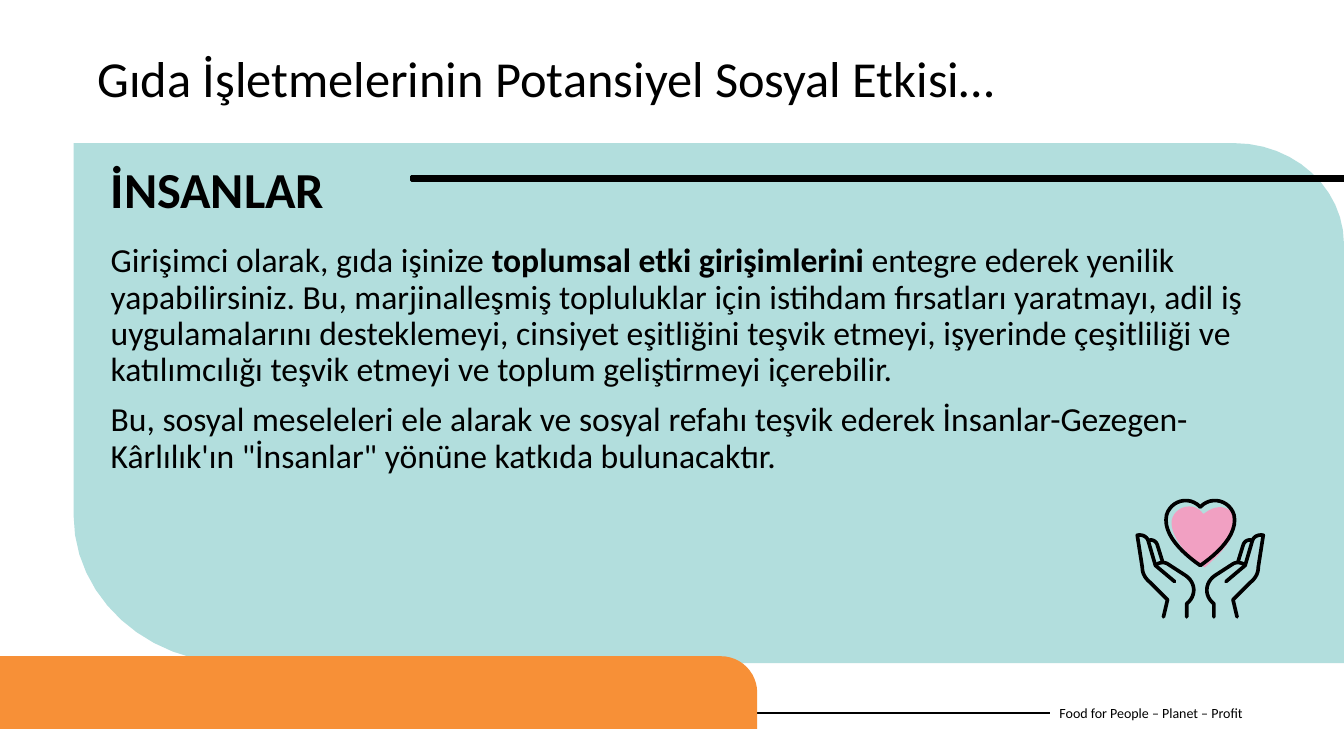
from lxml.etree import SubElement
from pptx import Presentation
from pptx.dml.color import RGBColor
from pptx.enum.shapes import MSO_CONNECTOR, MSO_SHAPE
from pptx.enum.text import MSO_ANCHOR
from pptx.oxml.ns import qn
from pptx.util import Inches, Pt

BLACK, MINT, ORANGE, PINK = "000000", "B2DEDD", "F79037", "F1A0C2"
FONT = "Calibri"
ICON_AXIS = 11.905
ICON_LINE = 2.6

# An outline is a list of (x, y) corners and (x1, y1, x2, y2, x, y) curves.
PANEL = [(0.73, 1.42), (12.24, 1.42), (12.84, 1.42, 13.33, 1.87, 13.33, 2.42),
         (13.33, 6.58), (2.34, 6.58), (1.45, 6.58, 0.73, 5.92, 0.73, 5.11)]
HEART_FILL = [(11.62, 5.2), (11.61, 5.05, 11.81, 4.96, 11.92, 5.08),
              (11.93, 5.1, 11.94, 5.1, 11.95, 5.09),
              (12.09, 4.98, 12.23, 5.04, 12.25, 5.15),
              (12.27, 5.33, 12.11, 5.49, 11.95, 5.63),
              (11.8, 5.55, 11.63, 5.35, 11.62, 5.2)]
HEART_HALF = [(11.905, 5.03), (12.02, 4.91, 12.2, 4.97, 12.24, 5.11),
              (12.28, 5.3, 12.08, 5.49, 11.905, 5.61)]
PALM = [(12.27, 6.12), (12.23, 5.95), (12.4, 5.78),
        (12.45, 5.74, 12.48, 5.69, 12.48, 5.63), (12.53, 5.31),
        (12.47, 5.3, 12.43, 5.33, 12.42, 5.37), (12.35, 5.61), (12.16, 5.77)]
THUMB = [(12.04, 6.12), (12.04, 5.99), (11.94, 5.91, 11.95, 5.78, 12.05, 5.71),
         (12.22, 5.6), (12.26, 5.57, 12.31, 5.58, 12.34, 5.6)]
FINGER = [(12.28, 5.57), (12.33, 5.41), (12.34, 5.37, 12.38, 5.35, 12.41, 5.36)]


def rgb(value):
    return RGBColor.from_string(value)


def paint(sp, fill=None, line=None, width=1):
    sp.shadow.inherit = False
    if fill:
        sp.fill.solid()
        sp.fill.fore_color.rgb = rgb(fill)
    else:
        sp.fill.background()
    if line:
        sp.line.color.rgb = rgb(line)
        sp.line.width = Pt(width)
    else:
        sp.line.fill.background()
    return sp


def flatten(outline, steps=12):
    """Turn corners and cubic curves into plain points."""
    points = []
    for node in outline:
        if len(node) == 2:
            points.append(node)
            continue
        start = points[-1]
        c1, c2, end = node[:2], node[2:4], node[4:]
        for i in range(1, steps + 1):
            t = i / steps
            u = 1 - t
            points.append(tuple(
                u**3 * a + 3 * u * u * t * b + 3 * u * t * t * c + t**3 * d
                for a, b, c, d in zip(start, c1, c2, end)))
    return points


def add_outline(s, points, close=True, **style):
    points = [(Inches(x), Inches(y)) for x, y in points]
    builder = s.shapes.build_freeform(*points[0])
    builder.add_line_segments(points[1:], close=close)
    return paint(builder.convert_to_shape(), **style)


def add_stroke(s, points):
    sp = add_outline(s, points, close=False, line=BLACK, width=ICON_LINE)
    ln = sp.line._get_or_add_ln()
    ln.set("cap", "rnd")
    SubElement(ln, qn("a:round"))


def add_box(s, kind, box, **style):
    return paint(s.shapes.add_shape(kind, *map(Inches, box)), **style)


def add_line(s, start, end, width):
    sp = s.shapes.add_connector(MSO_CONNECTOR.STRAIGHT, *map(Inches, start + end))
    sp.line.color.rgb = rgb(BLACK)
    sp.line.width = Pt(width)
    SubElement(sp._element.spPr, qn("a:effectLst"))


def add_text(s, box, paragraphs, size, anchor=MSO_ANCHOR.TOP, **spacing):
    """Each paragraph is a list of (text, bold) runs."""
    tf = s.shapes.add_textbox(*map(Inches, box)).text_frame
    tf.word_wrap = True
    tf.vertical_anchor = anchor
    for i, runs in enumerate(paragraphs):
        p = tf.add_paragraph() if i else tf.paragraphs[0]
        for name, value in spacing.items():
            setattr(p, name, value)
        for text, bold in runs:
            r = p.add_run()
            r.text = text
            r.font.color.rgb = rgb(BLACK)
            for name, value in {"name": FONT, "size": Pt(size), "bold": bold}.items():
                setattr(r.font, name, value)


def add_heart_in_hands(s):
    add_outline(s, flatten(HEART_FILL), fill=PINK)
    for part in (PALM, THUMB, FINGER, HEART_HALF):
        points = flatten(part)
        add_stroke(s, points)
        add_stroke(s, [(2 * ICON_AXIS - x, y) for x, y in points])


def main():
    prs = Presentation()
    prs.slide_width, prs.slide_height = Inches(13.33), Inches(7.5)
    s = prs.slides.add_slide(prs.slide_layouts[6])
    spacing = {"line_spacing": 0.9, "space_before": Pt(10)}

    add_text(s, (10.41, 6.87, 2.73, 0.4),
             [[("Food for People – Planet – Profit", False)]], 10, MSO_ANCHOR.MIDDLE)
    add_line(s, (0, 7.07), (10.41, 7.07), 1.5)
    add_outline(s, flatten(PANEL), fill=MINT)
    tab = add_box(s, MSO_SHAPE.ROUND_1_RECTANGLE, (0, 6.51, 7.51, 0.72), fill=ORANGE)
    tab.adjustments[0] = 0.5
    add_box(s, MSO_SHAPE.RECTANGLE, (4.08, 1.75, 9.25, 0.04),
            fill=BLACK, line=BLACK, width=1.93)

    add_text(s, (1, 2.37, 11.46, 3.76), [
        [("Girişimci olarak, gıda işinize ", False),
         ("toplumsal etki girişimlerini ", True),
         ("entegre ederek yenilik yapabilirsiniz. Bu, marjinalleşmiş topluluklar için "
          "istihdam fırsatları yaratmayı, adil iş uygulamalarını desteklemeyi, cinsiyet "
          "eşitliğini teşvik etmeyi, işyerinde çeşitliliği ve katılımcılığı teşvik etmeyi "
          "ve toplum geliştirmeyi içerebilir.", False)],
        [("Bu, sosyal meseleleri ele alarak ve sosyal refahı teşvik ederek "
          "İnsanlar-Gezegen-Kârlılık'ın \"İnsanlar\" yönüne katkıda bulunacaktır.", False)],
    ], 24, **spacing)
    add_text(s, (0.87, 0.49, 11.59, 0.88),
             [[("Gıda İşletmelerinin Potansiyel Sosyal Etkisi…", False)]], 36, **spacing)
    add_heart_in_hands(s)
    add_text(s, (1, 1.52, 2.67, 0.71), [[("İNSANLAR", True)]], 36)
    prs.save("out.pptx")


if __name__ == "__main__":
    main()
